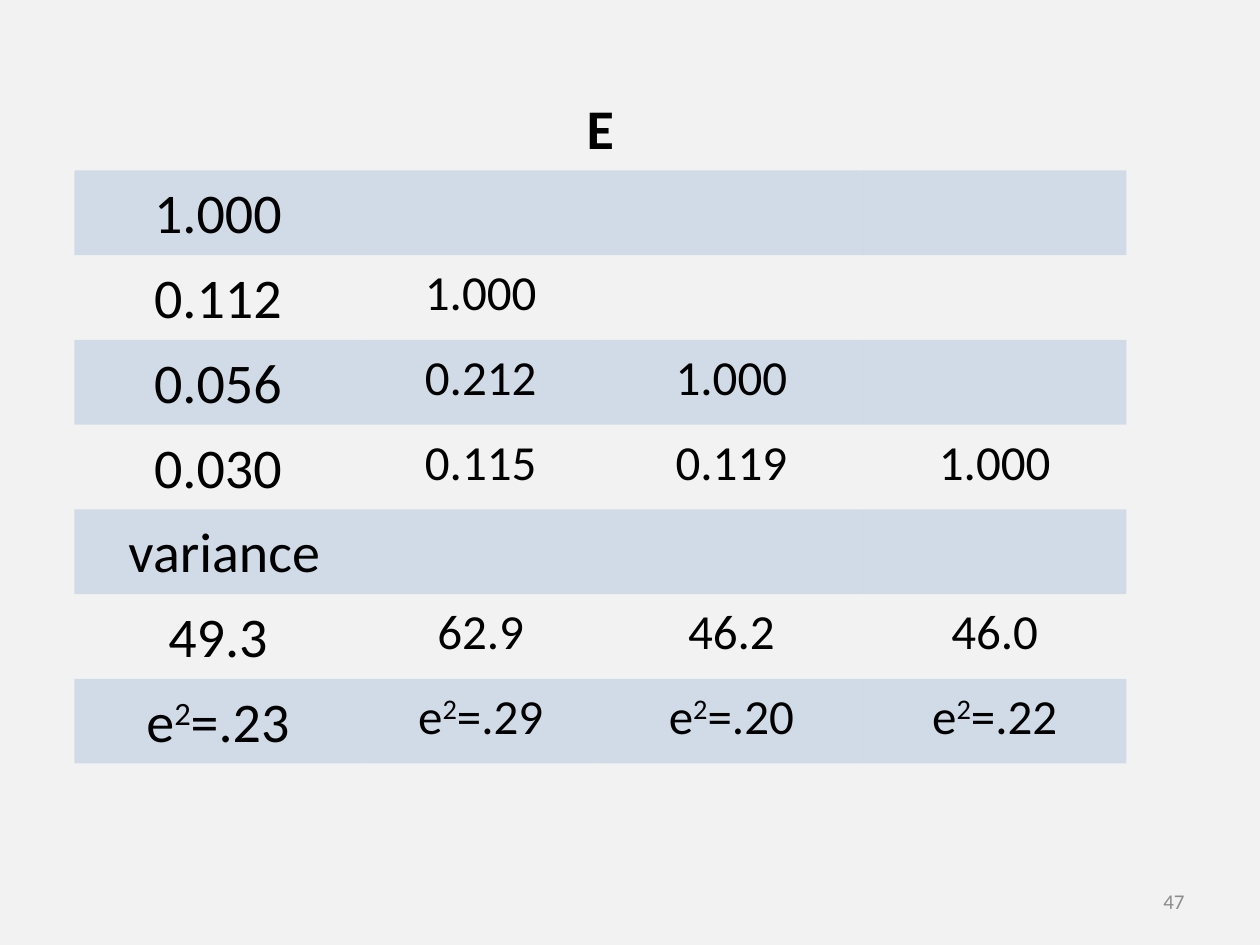
import pptx
import pptx.util
import pptx.dml.color
import pptx.enum.text
import pptx.oxml.ns
import lxml.etree

COLORS = {"background": "F2F2F2", "band": "4F81BD", "ink": "000000", "muted": "8C8C8C"}
NO_STYLE = "{2D5ABB26-0587-4C30-8999-92F81FD0307C}"
CENTER = pptx.enum.text.PP_ALIGN.CENTER
RIGHT = pptx.enum.text.PP_ALIGN.RIGHT
MIDDLE = pptx.enum.text.MSO_ANCHOR.MIDDLE

CORRELATIONS = [
    ["1.000"],
    ["0.112", "1.000"],
    ["0.056", "0.212", "1.000"],
    ["0.030", "0.115", "0.119", "1.000"],
]
VARIANCES = ["49.3", "62.9", "46.2", "46.0"]
PROPORTIONS = ["e^2=.23", "e^2=.29", "e^2=.20", "e^2=.22"]


class Deck:
    """Holds the style and the current slide, and draws each kind of element."""

    font = "Calibri"
    lead_size, body_size, number_size = 32, 28, 12

    def __init__(self, width, height):
        self.presentation = pptx.Presentation()
        self.presentation.slide_width = pptx.util.Inches(width)
        self.presentation.slide_height = pptx.util.Inches(height)
        self.slide = self.presentation.slides.add_slide(self.presentation.slide_layouts[6])
        self.paint(self.slide.background.fill, "background")

    def color(self, name):
        return pptx.dml.color.RGBColor.from_string(COLORS[name])

    def paint(self, fill, name):
        fill.solid()
        fill.fore_color.rgb = self.color(name)

    def place(self, left, top, width, height):
        across, down = self.presentation.slide_width, self.presentation.slide_height
        return int(left * across), int(top * down), int(width * across), int(height * down)

    def label(self, paragraph, text, size, color="ink", bold=False, align=CENTER):
        paragraph.alignment = align
        base, caret, rest = text.partition("^")
        for part, raised in ((base, False), (rest[:1], True), (rest[1:], False)):
            if not part:
                continue
            run = paragraph.add_run()
            run.text = part
            run.font.name, run.font.size = self.font, pptx.util.Pt(size)
            run.font.bold, run.font.color.rgb = bold, self.color(color)
            if raised:
                run._r.get_or_add_rPr().set("baseline", "30000")

    def cell(self, cell, text, size, bold=False, banded=False):
        cell.margin_left = cell.margin_right = pptx.util.Inches(0.07)
        cell.margin_top = cell.margin_bottom = 0
        if banded:
            self.paint(cell.fill, "band")
            tint = cell._tc.find(".//" + pptx.oxml.ns.qn("a:tcPr") + "//" + pptx.oxml.ns.qn("a:srgbClr"))
            lxml.etree.SubElement(tint, pptx.oxml.ns.qn("a:alpha")).set("val", "20000")
        else:
            cell.fill.background()
        paragraph = cell.text_frame.paragraphs[0]
        paragraph.line_spacing = 1.15
        self.label(paragraph, text, size, bold=bold)

    def matrix(self, heading, rows, widths, box):
        frame = self.slide.shapes.add_table(len(rows) + 1, len(widths), *self.place(*box))
        table = frame.table
        table.first_row = table.horz_banding = False
        table._tbl.tblPr.find(pptx.oxml.ns.qn("a:tableStyleId")).text = NO_STYLE
        for column, width in zip(table.columns, widths):
            column.width = pptx.util.Inches(width)
        table.cell(0, 0).merge(table.cell(0, len(widths) - 1))
        self.cell(table.cell(0, 0), heading, self.lead_size, bold=True)
        for r, values in enumerate(rows, 1):
            for c in range(len(widths)):
                value = values[c] if c < len(values) else ""
                size = self.body_size if c else self.lead_size
                self.cell(table.cell(r, c), value, size, banded=r % 2 == 1)

    def page_number(self, number, box):
        frame = self.slide.shapes.add_textbox(*self.place(*box)).text_frame
        frame.word_wrap, frame.vertical_anchor = True, MIDDLE
        self.label(frame.paragraphs[0], number, self.number_size, "muted", align=RIGHT)


def main():
    deck = Deck(10, 7.5)
    deck.page_number("47", (0.717, 6.95 / 7.5, 0.233, 0.4 / 7.5))
    rows = CORRELATIONS + [[" variance"], VARIANCES, PROPORTIONS]
    deck.matrix("E", rows, (2.28, 1.89, 2.09, 2.09), (0.059, 0.68 / 7.5, 0.835, 5.38 / 7.5))
    deck.presentation.save("out.pptx")


if __name__ == "__main__":
    main()
